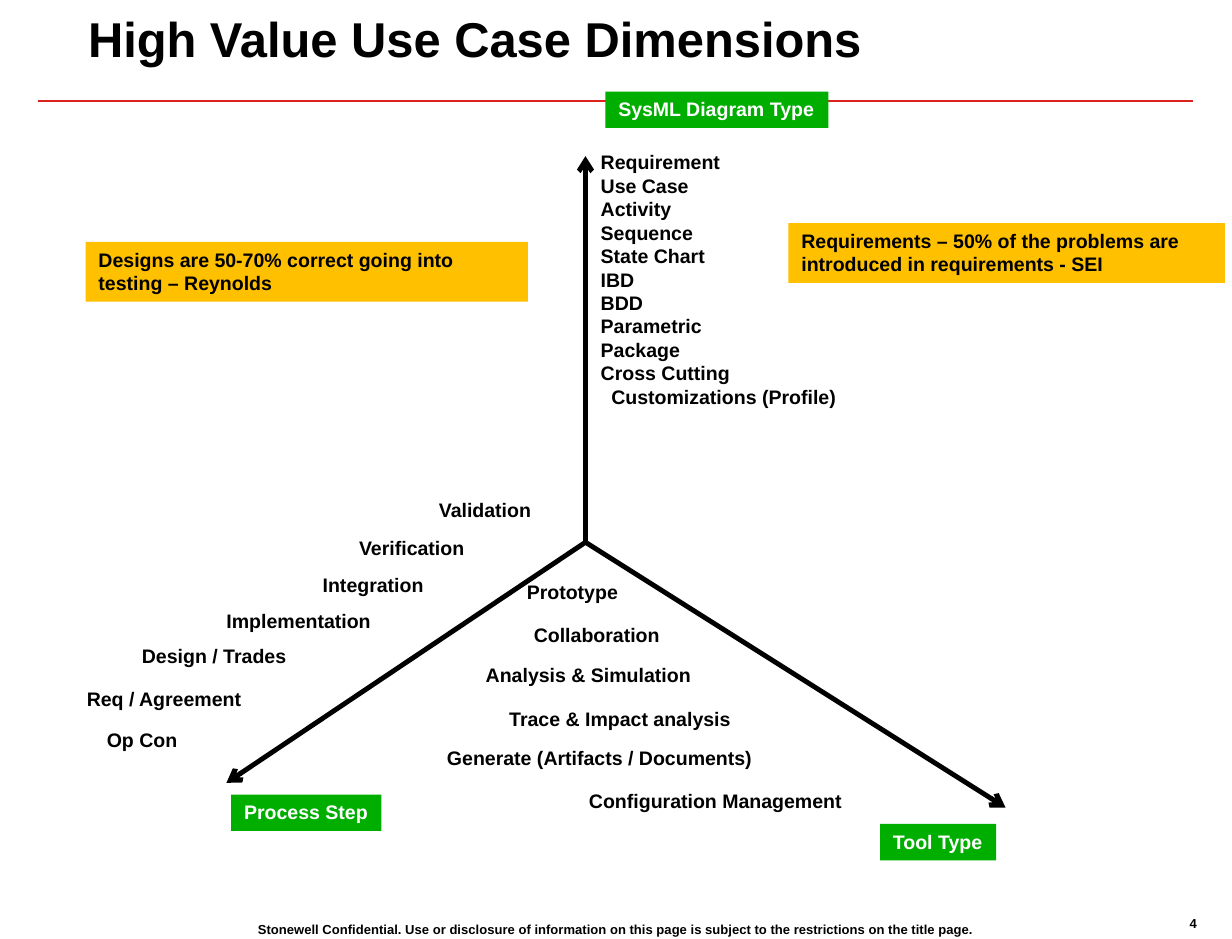
from lxml import etree
from pptx import Presentation, util as u
from pptx.dml.color import RGBColor
from pptx.enum import shapes, text
from pptx.oxml import ns

WIDTH, HEIGHT = 10.5, 8
BLACK, WHITE, RED, GREEN, AMBER = "000000", "FFFFFF", "DC241F", "00AE00", "FFC000"
LABEL_HEIGHT = 0.31
ORIGIN = (4.99, 4.62)
AXIS_ENDS = [(4.99, 1.33), (8.57, 6.88), (1.93, 6.67)]

# Text, left, top, width
AXIS_NAMES = [
    ("SysML Diagram Type", 5.16, 0.78, 1.9),
    ("Process Step", 1.97, 6.77, 1.28),
    ("Tool Type", 7.5, 7.02, 0.99),
]
PROCESS_STEPS = [
    ("Validation", 3.63, 4.19, 1.01),
    ("Verification", 2.95, 4.52, 1.12),
    ("Integration", 2.64, 4.83, 1.08),
    ("Implementation", 1.82, 5.14, 1.46),
    ("Design / Trades", 1.1, 5.44, 1.46),
    ("Req / Agreement", 0.63, 5.8, 1.54),
    ("Op Con", 0.8, 6.15, 0.82),
]
TOOL_TYPES = [
    ("Prototype", 4.38, 4.89, 1),
    ("Collaboration", 4.44, 5.26, 1.3),
    ("Analysis & Simulation", 4.03, 5.6, 1.98),
    ("Trace & Impact analysis", 4.23, 5.97, 2.12),
    ("Generate (Artifacts / Documents)", 3.7, 6.31, 2.84),
    ("Configuration Management", 4.91, 6.67, 2.39),
]
DIAGRAM_TYPES = [
    "Requirement", "Use Case", "Activity", "Sequence", "State Chart", "IBD", "BDD",
    "Parametric", "Package", "Cross Cutting", "Customizations (Profile)",
]
FINDINGS = [
    ("Requirements – 50% of the problems are introduced in requirements - SEI",
     6.72, 1.9, 3.72),
    ("Designs are 50-70% correct going into testing – Reynolds", 0.73, 2.06, 3.77),
]


def color(code):
    return RGBColor.from_string(code)


def inches(*lengths):
    return [u.Inches(length) for length in lengths]


def set_attributes(target, values):
    for name, value in values.items():
        setattr(target, name, value)


def write(box, lines, size=12, ink=BLACK, wrap=False, side=0.11,
          anchor=text.MSO_ANCHOR.TOP, align=text.PP_ALIGN.LEFT, spacing=1.0):
    frame = box.text_frame
    set_attributes(frame, {
        "word_wrap": wrap, "auto_size": text.MSO_AUTO_SIZE.NONE,
        "vertical_anchor": anchor,
        "margin_left": u.Inches(side), "margin_right": u.Inches(side),
        "margin_top": u.Inches(0.05), "margin_bottom": u.Inches(0.05),
    })
    frame.text = "\n".join(lines)
    for para in frame.paragraphs:
        set_attributes(para, {"alignment": align, "line_spacing": spacing})
        set_attributes(para.font, {"name": "Arial", "size": u.Pt(size), "bold": True})
        para.font.color.rgb = color(ink)


def add_text(slide, lines, left, top, width, height=LABEL_HEIGHT, **style):
    box = slide.shapes.add_textbox(*inches(left, top, width, height))
    write(box, lines, **style)
    return box


def add_panel(slide, line, left, top, width, height, fill, **style):
    panel = slide.shapes.add_shape(shapes.MSO_SHAPE.RECTANGLE,
                                   *inches(left, top, width, height))
    panel.shadow.inherit = False
    panel.fill.solid()
    panel.fill.fore_color.rgb = color(fill)
    panel.line.fill.background()
    write(panel, [line], **style)


def add_line(slide, start, end, ink, weight, arrow=False):
    line = slide.shapes.add_connector(shapes.MSO_CONNECTOR.STRAIGHT,
                                      *inches(*start, *end))
    line.line.width = u.Pt(weight)
    line.line.color.rgb = color(ink)
    if arrow:
        etree.SubElement(line.line._get_or_add_ln(), ns.qn("a:tailEnd"), type="arrow")
    etree.SubElement(line._element.spPr, ns.qn("a:effectLst"))


def add_title(slide, line):
    title = slide.shapes.title
    set_attributes(title, dict(zip(("left", "top", "width", "height"),
                                   inches(0.65, 0.12, 9.18, 0.55))))
    write(title, [line], size=30, wrap=True, side=0.1, spacing=0.8)


def add_footer(slide):
    style = {"size": 8, "side": 0.1, "spacing": 0.9, "anchor": text.MSO_ANCHOR.MIDDLE}
    add_text(slide, ["4"], 10.04, 7.76, 0.35, 0.23, **style)
    add_text(slide, ["Stonewell Confidential. Use or disclosure of information on this "
                     "page is subject to the restrictions on the title page."],
             2.05, 7.81, 6.4, 0.23, align=text.PP_ALIGN.CENTER, **style)


def add_diagram_types(slide):
    box = add_text(slide, DIAGRAM_TYPES, 5.01, 1.23, 2.25, 2.33)
    continuation = box.text_frame.paragraphs[-1]
    continuation._p.get_or_add_pPr().set("marL", str(u.Inches(0.09)))


def main():
    deck = Presentation()
    deck.slide_width, deck.slide_height = inches(WIDTH, HEIGHT)
    slide = deck.slides.add_slide(deck.slide_layouts[5])

    add_footer(slide)
    add_line(slide, (0.32, 0.86), (10.17, 0.86), RED, 1)
    add_title(slide, "High Value Use Case Dimensions")
    for end in AXIS_ENDS:
        add_line(slide, ORIGIN, end, BLACK, 3, arrow=True)
    for name, left, top, width in AXIS_NAMES:
        add_panel(slide, name, left, top, width, LABEL_HEIGHT, GREEN, ink=WHITE)
    add_diagram_types(slide)
    for name, left, top, width in PROCESS_STEPS + TOOL_TYPES:
        add_text(slide, [name], left, top, width)
    for finding, left, top, width in FINDINGS:
        add_panel(slide, finding, left, top, width, 0.51, AMBER, wrap=True)

    deck.save("out.pptx")


if __name__ == "__main__":
    main()
